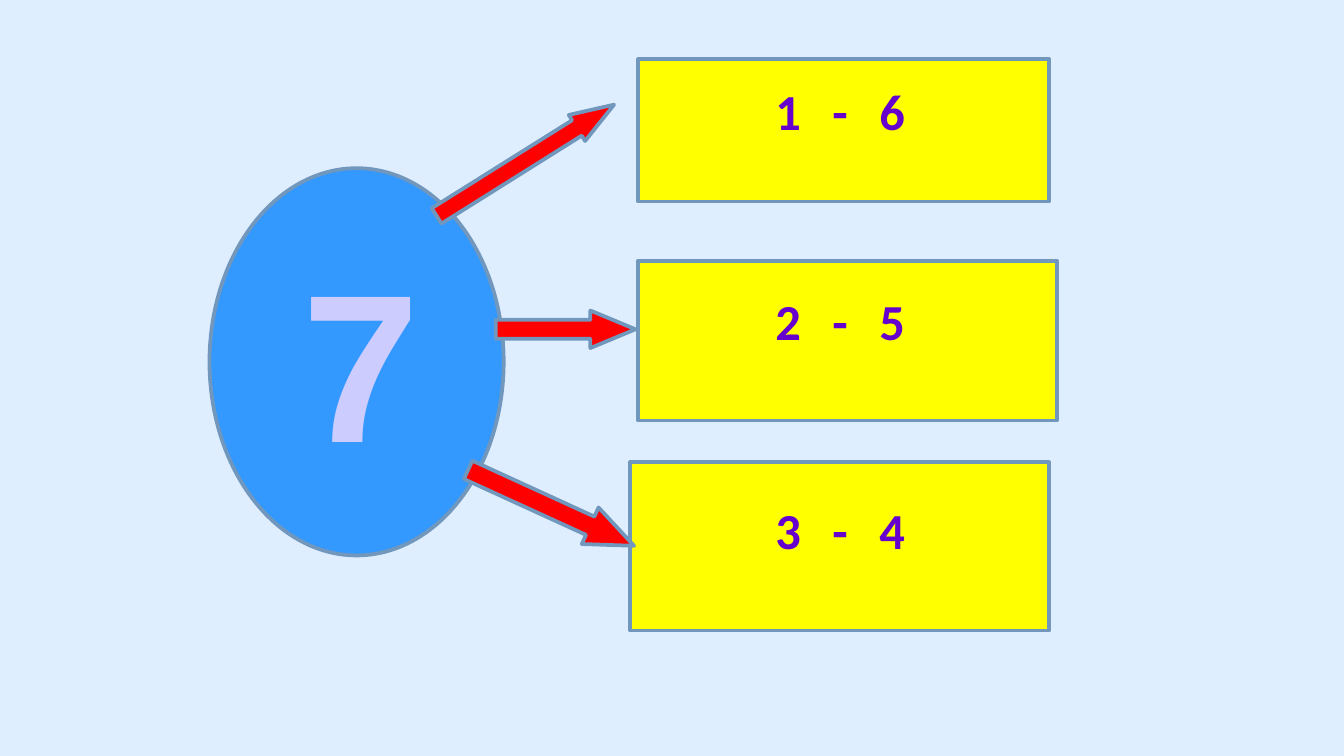
import pptx
import pptx.dml.color
import pptx.enum.shapes
import pptx.enum.text
import pptx.util

Cm = pptx.util.Cm
Pt = pptx.util.Pt
SHAPE = pptx.enum.shapes.MSO_SHAPE

COLORS = {
    "background": "DFEEFF",
    "circle": "3399FF",
    "box": "FFFF00",
    "arrow": "FF0000",
    "outline": "7197BD",
    "number": "CCCCFF",
    "pair": "6600CC",
}

BOXES = [
    (12.06, 1.12, 7.77, 2.69),
    (12.06, 4.93, 7.92, 3.02),
    (11.91, 8.74, 7.92, 3.18),
]
ARROWS = [
    ((7.95, 2.74, 3.96, 0.58), 327.9, (0.59, 1.43)),
    ((9.37, 5.87, 2.64, 0.71), 0, (0.5, 1.2)),
    ((8.69, 9.22, 3.45, 0.76), 24.6, (0.5, 1.2)),
]
PAIRS = ["1 - 6", "2 - 5", "3 - 4"]
PAIR_TOP = 1.42
PAIR_PITCH = 3.96


def rgb(name):
    return pptx.dml.color.RGBColor.from_string(COLORS[name])


def add_outlined_shape(slide, kind, bounds, color):
    shape = slide.shapes.add_shape(kind, *map(Cm, bounds))
    shape.shadow.inherit = False
    shape.fill.solid()
    shape.fill.fore_color.rgb = rgb(color)
    shape.line.color.rgb = rgb("outline")
    shape.line.width = Pt(2)
    return shape


def add_arrow(slide, bounds, rotation, adjustments):
    arrow = add_outlined_shape(slide, SHAPE.RIGHT_ARROW, bounds, "arrow")
    arrow.rotation = rotation
    for index, value in enumerate(adjustments):
        arrow.adjustments[index] = value


def add_label(slide, text, bounds, font_name, size, color, spacing):
    label = slide.shapes.add_textbox(*map(Cm, bounds))
    frame = label.text_frame
    frame.word_wrap = False
    frame.margin_left = frame.margin_right = Cm(0.18)
    frame.margin_top = frame.margin_bottom = Cm(0.1)
    paragraph = frame.paragraphs[0]
    paragraph.alignment = pptx.enum.text.PP_ALIGN.CENTER
    paragraph.font.name = font_name
    paragraph.font.size = Pt(size)
    paragraph.font.bold = True
    paragraph.font.color.rgb = rgb(color)
    run = paragraph.add_run()
    run.text = text
    run._r.get_or_add_rPr().set("spc", str(round(spacing * 100)))


def main():
    presentation = pptx.Presentation()
    presentation.slide_width = Cm(25.4)
    presentation.slide_height = Cm(14.29)
    slide = presentation.slides.add_slide(presentation.slide_layouts[6])
    slide.background.fill.solid()
    slide.background.fill.fore_color.rgb = rgb("background")

    add_outlined_shape(slide, SHAPE.OVAL, (3.96, 3.18, 5.56, 7.32), "circle")
    add_label(slide, "7", (5.51, 4.27, 2.62, 5), "Arial", 113, "number", 0.4)
    for bounds in BOXES:
        add_outlined_shape(slide, SHAPE.RECTANGLE, bounds, "box")
    for bounds, rotation, adjustments in ARROWS:
        add_arrow(slide, bounds, rotation, adjustments)
    for index, pair in enumerate(PAIRS):
        bounds = (13.34, PAIR_TOP + index * PAIR_PITCH, 5.08, 1.9)
        add_label(slide, pair, bounds, "Calibri", 27, "pair", 5.4)

    presentation.save("out.pptx")


if __name__ == "__main__":
    main()
